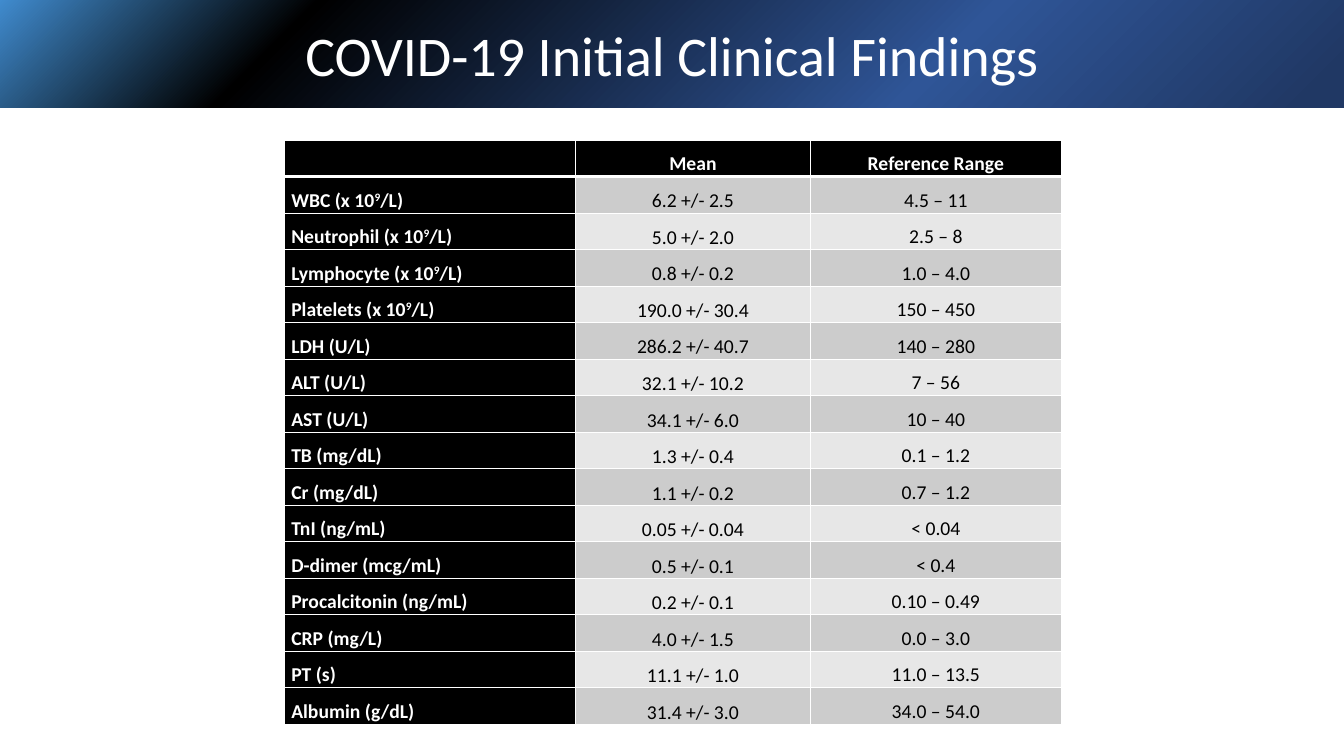
"""Build a slide with a gradient title band and a table of clinical findings."""
from lxml import etree
from pptx import Presentation
from pptx.dml.color import RGBColor
from pptx.enum.shapes import MSO_SHAPE
from pptx.enum.text import MSO_ANCHOR, PP_ALIGN
from pptx.oxml.ns import qn
from pptx.util import Inches, Pt

RECTANGLE = MSO_SHAPE.RECTANGLE
TOP, MIDDLE, BOTTOM = MSO_ANCHOR.TOP, MSO_ANCHOR.MIDDLE, MSO_ANCHOR.BOTTOM
CENTER, JUSTIFY = PP_ALIGN.CENTER, PP_ALIGN.JUSTIFY
BLACK, WHITE = "000000", "FFFFFF"
BAND_STOPS = [(0, "408BCE"), (22, BLACK), (69, "2F5597"), (97, "203864")]
COLUMN_WIDTHS = [2.89, 2.33, 2.49]
ROW_HEIGHT = 0.3625
FINDINGS = [
    ("", "Mean", "Reference Range"),
    ("WBC (x 10⁹/L)", "6.2 +/- 2.5", "4.5 – 11"),
    ("Neutrophil (x 10⁹/L)", "5.0 +/- 2.0", "2.5 – 8"),
    ("Lymphocyte (x 10⁹/L)", "0.8 +/- 0.2", "1.0 – 4.0"),
    ("Platelets (x 10⁹/L)", "190.0 +/- 30.4", "150 – 450"),
    ("LDH (U/L)", "286.2 +/- 40.7", "140 – 280"),
    ("ALT (U/L)", "32.1 +/- 10.2", "7 – 56"),
    ("AST (U/L)", "34.1 +/- 6.0", "10 – 40"),
    ("TB (mg/dL)", "1.3 +/- 0.4", "0.1 – 1.2"),
    ("Cr (mg/dL)", "1.1 +/- 0.2", "0.7 – 1.2"),
    ("TnI (ng/mL)", "0.05 +/- 0.04", "< 0.04"),
    ("D-dimer (mcg/mL)", "0.5 +/- 0.1", "< 0.4"),
    ("Procalcitonin (ng/mL)", "0.2 +/- 0.1", "0.10 – 0.49"),
    ("CRP (mg/L)", "4.0 +/- 1.5", "0.0 – 3.0"),
    ("PT (s)", "11.1 +/- 1.0", "11.0 – 13.5"),
    ("Albumin (g/dL)", "31.4 +/- 3.0", "34.0 – 54.0"),
]


def write(para, text, size=14, color=BLACK, bold=False, align=CENTER, spacing=1.5):
    """Fill a paragraph, raising the power of ten where there is one."""
    para.alignment = align
    para.line_spacing = spacing
    before, power, after = text.partition("⁹")
    for part, raised in ((before, False), ("9" if power else "", True), (after, False)):
        if not part:
            continue
        span = para.add_run()
        span.text = part
        span.font.name = "Calibri"
        span.font.size = Pt(size)
        span.font.bold = bold
        span.font.color.rgb = RGBColor.from_string(color)
        if raised:
            span.font._element.set("baseline", "30000")


def add_borders(cell, widths):
    """Draw white cell borders, placed ahead of the cell fill."""
    properties = cell._tc.get_or_add_tcPr()
    for position, (side, width) in enumerate(widths.items()):
        line = etree.Element(qn(f"a:{side}"), w=str(Pt(width)))
        solid = etree.SubElement(line, qn("a:solidFill"))
        etree.SubElement(solid, qn("a:srgbClr"), val=WHITE)
        properties.insert(position, line)


deck = Presentation()
deck.slide_width, deck.slide_height = Inches(13.333), Inches(7.5)
page = deck.slides.add_slide(deck.slide_layouts[6])

frame = page.shapes.add_table(
    len(FINDINGS), len(COLUMN_WIDTHS), Inches(2.82), Inches(1.39),
    Inches(sum(COLUMN_WIDTHS)), Inches(ROW_HEIGHT * len(FINDINGS)))
table = frame.table
table.first_row = table.horz_banding = False
for column, width in zip(table.columns, COLUMN_WIDTHS):
    column.width = Inches(width)

for row, finding in enumerate(FINDINGS):
    table.rows[row].height = Inches(ROW_HEIGHT)
    for column, text in enumerate(finding):
        cell = table.cell(row, column)
        heading = row == 0 or column == 0
        cell.margin_left = cell.margin_right = Inches(0.07)
        cell.margin_top = cell.margin_bottom = 0
        cell.vertical_anchor = BOTTOM if column == 1 and row else TOP
        cell.fill.solid()
        shade = BLACK if heading else "CCCCCC" if row % 2 else "E7E7E7"
        cell.fill.fore_color.rgb = RGBColor.from_string(shade)
        add_borders(cell, {"lnL": 1, "lnR": 1, "lnT": 3 if row == 1 else 1,
                           "lnB": 3 if row == 0 else 1})
        write(cell.text_frame.paragraphs[0], text, bold=heading,
              color=WHITE if heading else BLACK,
              align=JUSTIFY if column == 0 else CENTER)

band = page.shapes.add_shape(RECTANGLE, 0, 0, deck.slide_width, Inches(1.07))
band.shadow.inherit = False
band.line.fill.background()
band.fill.gradient()
gradient = band._element.spPr.find(qn("a:gradFill"))
for child in list(gradient):
    gradient.remove(child)
stops = etree.SubElement(gradient, qn("a:gsLst"))
for percent, color in BAND_STOPS:
    stop = etree.SubElement(stops, qn("a:gs"), pos=str(percent * 1000))
    etree.SubElement(stop, qn("a:srgbClr"), val=color)
circle = etree.SubElement(gradient, qn("a:path"), path="circle")
etree.SubElement(circle, qn("a:fillToRect"), r="100000", b="100000")
band.text_frame.word_wrap = True
band.text_frame.vertical_anchor = MIDDLE
write(band.text_frame.paragraphs[0], "COVID-19 Initial Clinical Findings",
      size=40, color=WHITE, spacing=1.0)

deck.save("out.pptx")
